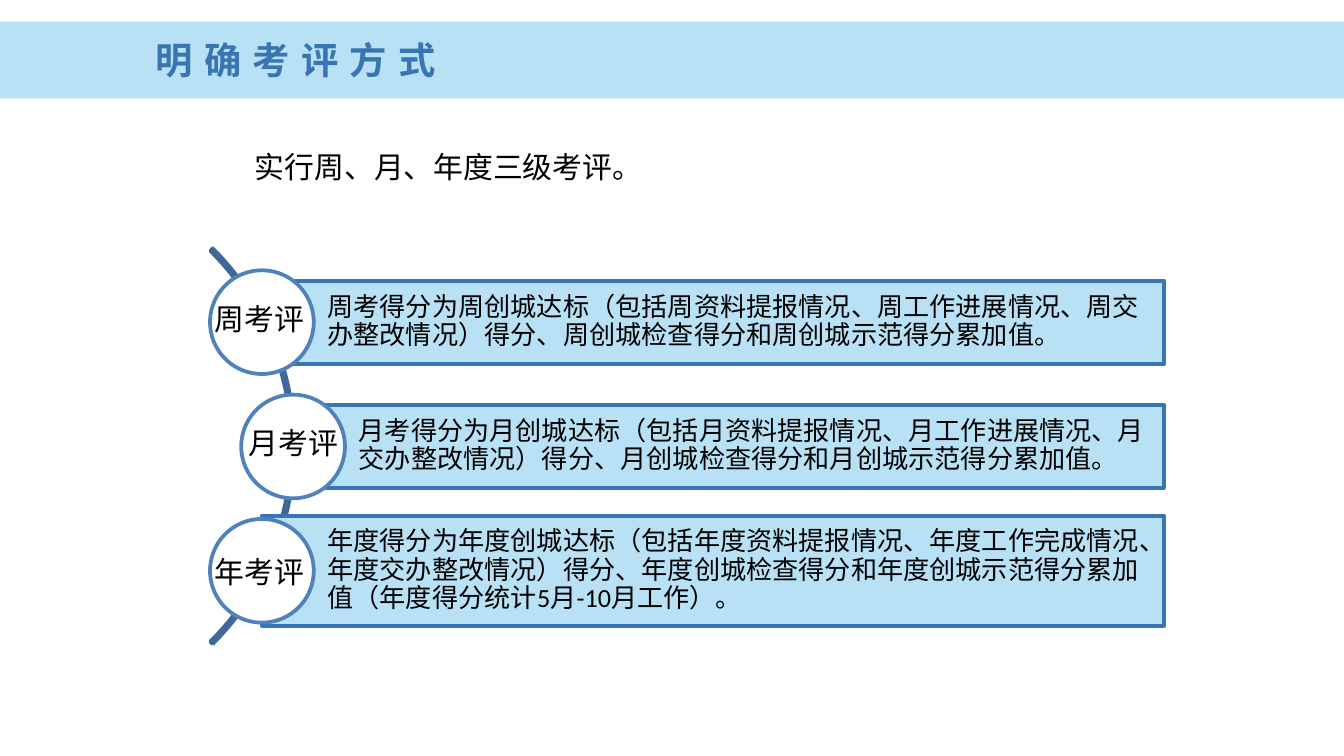
from lxml.etree import SubElement
from pptx import Presentation
from pptx.dml.color import RGBColor
from pptx.enum.shapes import MSO_SHAPE
from pptx.enum.text import MSO_ANCHOR, MSO_AUTO_SIZE
from pptx.oxml.ns import qn
from pptx.util import Cm, Pt

COLORS = {
    "paper": "FFFFFF",
    "band": "B9E1F5",
    "accent": "3975B2",
    "ring": "4F81BD",
    "arc": "3F6797",
    "text": "000000",
}
CJK = "Noto Sans CJK SC"


def write(box, text, size, font="Calibri", color="text", bold=False,
          tracking=0, first_indent=0, line_spacing=None, wrap=True):
    frame = box.text_frame
    frame.word_wrap = wrap
    para = frame.paragraphs[0]
    if line_spacing:
        para.line_spacing = line_spacing
    if first_indent:
        para._p.get_or_add_pPr().set("indent", str(Cm(first_indent)))
    span = para.add_run()
    span.text = text
    span.font.size = Pt(size)
    span.font.bold = bold
    span.font.name = font
    span.font.color.rgb = RGBColor.from_string(COLORS[color])
    properties = span._r.get_or_add_rPr()
    if tracking:
        properties.set("spc", str(tracking * 100))
    SubElement(properties, qn("a:ea")).set("typeface", CJK)


def add_shape(kind, left, top, width, height, fill=None, line=None):
    shape = page.shapes.add_shape(kind, Cm(left), Cm(top), Cm(width), Cm(height))
    shape.shadow.inherit = False
    if fill:
        shape.fill.solid()
        shape.fill.fore_color.rgb = RGBColor.from_string(COLORS[fill])
    else:
        shape.fill.background()
    if line:
        shape.line.width = Pt(2)
        shape.line.color.rgb = RGBColor.from_string(COLORS[line])
    else:
        shape.line.fill.background()
    return shape


deck = Presentation()
deck.slide_width, deck.slide_height = Cm(25.4), Cm(14.29)
page = deck.slides.add_slide(deck.slide_layouts[6])
page.background.fill.solid()
page.background.fill.fore_color.rgb = RGBColor.from_string(COLORS["paper"])

# Title band and introduction
add_shape(MSO_SHAPE.RECTANGLE, 0, 0.41, 25.4, 1.45, fill="band")
title = page.shapes.add_textbox(Cm(2.69), Cm(0.58), Cm(6.07), Cm(1.12))
write(title, "明确考评方式", 20, font=CJK, color="accent", bold=True,
      tracking=6, wrap=False)
title.text_frame.auto_size = MSO_AUTO_SIZE.SHAPE_TO_FIT_TEXT

intro = page.shapes.add_textbox(Cm(3.3), Cm(2.34), Cm(20.17), Cm(1.12))
write(intro, "实行周、月、年度三级考评。", 16, font=CJK, first_indent=1.27,
      line_spacing=1.5)
intro.text_frame.auto_size = MSO_AUTO_SIZE.SHAPE_TO_FIT_TEXT

# Arc that links the three levels
arc = add_shape(MSO_SHAPE.BLOCK_ARC, -5, 3.15, 10.57, 10.57, line="arc")
for index, value in enumerate((189, 27, 0.006)):
    arc.adjustments[index] = value

# Each level: label, its left and top, bar left, top and height, description
levels = [
    ("周考评", 3.81, 5.56, 4.95, 5.31, 1.57,
     "周考得分为周创城达标（包括周资料提报情况、周工作进展情况、周交办整改情况）"
     "得分、周创城检查得分和周创城示范得分累加值。"),
    ("月考评", 4.45, 7.9, 5.54, 7.65, 1.57,
     "月考得分为月创城达标（包括月资料提报情况、月工作进展情况、月交办整改情况）"
     "得分、月创城检查得分和月创城示范得分累加值。"),
    ("年考评", 3.81, 10.34, 4.95, 9.75, 2.08,
     "年度得分为年度创城达标（包括年度资料提报情况、年度工作完成情况、年度交办整改情况）"
     "得分、年度创城检查得分和年度创城示范得分累加值（年度得分统计5月-10月工作）。"),
]
BAR_RIGHT = 22
CIRCLE = 1.96
CIRCLE_TOP, CIRCLE_STEP = 5.11, 2.35

for row, (label, label_left, label_top, left, top, height, text) in enumerate(levels):
    bar = add_shape(MSO_SHAPE.RECTANGLE, left, top, BAR_RIGHT - left, height,
                    fill="band", line="accent")
    frame = bar.text_frame
    frame.vertical_anchor = MSO_ANCHOR.MIDDLE
    frame.margin_left = Cm(1.24)
    frame.margin_right = frame.margin_top = frame.margin_bottom = Cm(0.1)
    write(bar, text, 14, line_spacing=0.9)
    frame.paragraphs[0].alignment = 1

    add_shape(MSO_SHAPE.OVAL, left - CIRCLE / 2, CIRCLE_TOP + row * CIRCLE_STEP,
              CIRCLE, CIRCLE, fill="paper", line="ring")
    caption = page.shapes.add_textbox(Cm(label_left), Cm(label_top), Cm(2.24), Cm(0.94))
    write(caption, label, 16, wrap=False)
    caption.text_frame.auto_size = MSO_AUTO_SIZE.SHAPE_TO_FIT_TEXT

deck.save("out.pptx")
